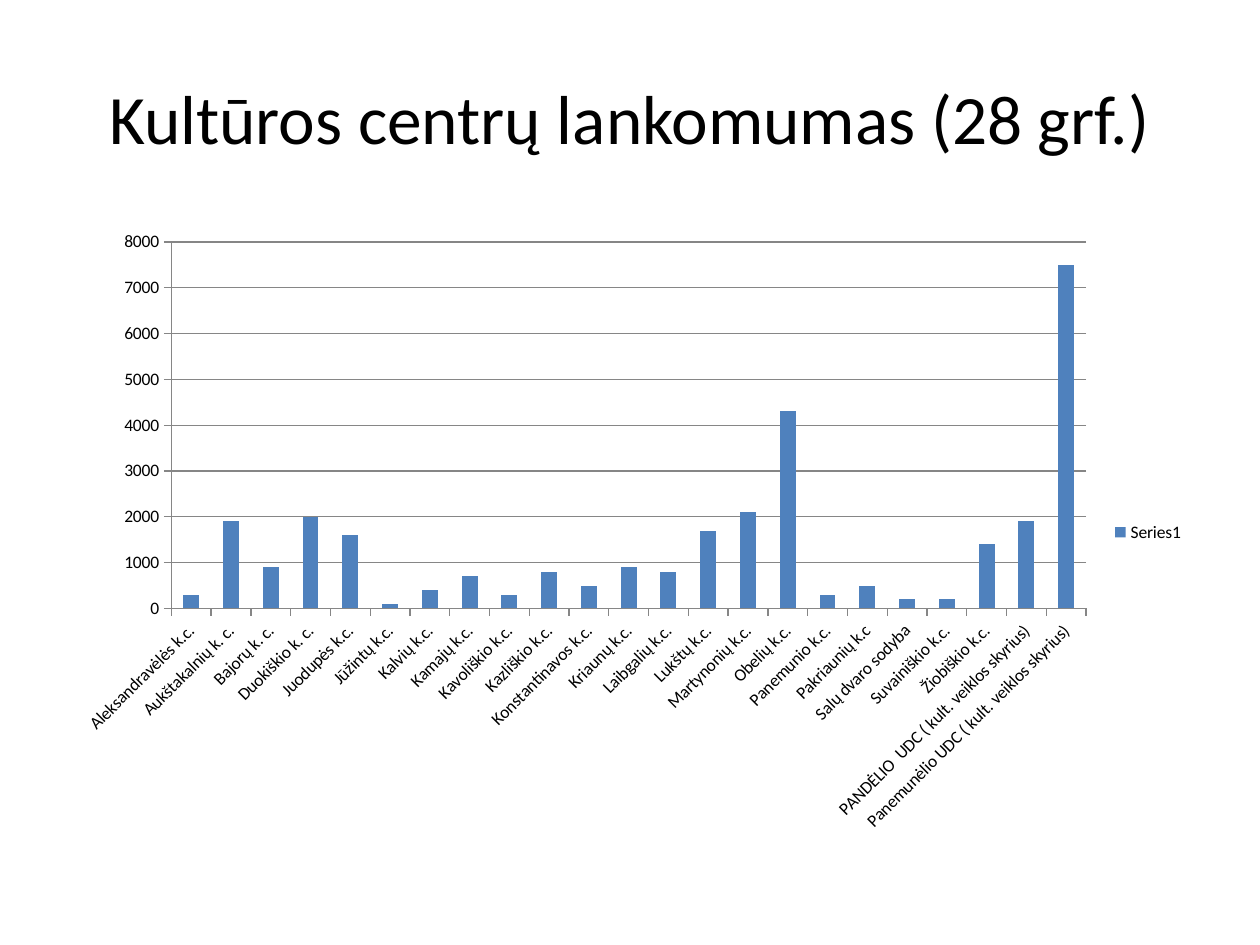
from lxml import etree
from pptx import Presentation
from pptx import util as u
from pptx.chart.data import CategoryChartData
from pptx.dml.color import RGBColor
from pptx.enum import chart as ch, text
from pptx.oxml.ns import qn

TITLE = "Kultūros centrų lankomumas (28 grf.)"
VISITS = [
    ("Aleksandravėlės k.c.", 300),
    ("Aukštakalnių k. c.", 1900),
    ("Bajorų k. c.", 900),
    ("Duokiškio k. c.", 2000),
    ("Juodupės k.c.", 1600),
    ("Jūžintų k.c.", 100),
    ("Kalvių k.c.", 400),
    ("Kamajų k.c.", 700),
    ("Kavoliškio k.c.", 300),
    ("Kazliškio k.c.", 800),
    ("Konstantinavos k.c.", 500),
    ("Kriaunų k.c.", 900),
    ("Laibgalių k.c.", 800),
    ("Lukštų k.c.", 1700),
    ("Martynonių k.c.", 2100),
    ("Obelių k.c.", 4300),
    ("Panemunio k.c.", 300),
    ("Pakriaunių k.c", 500),
    ("Salų dvaro sodyba", 200),
    ("Suvainiškio k.c.", 200),
    ("Žiobiškio k.c.", 1400),
    ("PANDĖLIO  UDC ( kult. veiklos skyrius)", 1900),
    ("Panemunėlio UDC ( kult. veiklos skyrius)", 7500),
]
# Chart size and the plot area inside it, in inches
WIDE, HIGH = 9, 4.95
PLOT = {"x": 0.86 / WIDE, "y": 0.17 / HIGH,
        "w": 7.26 / WIDE, "h": 2.91 / HIGH}

FONT = "Calibri"
BLACK = RGBColor(0, 0, 0)
BLUE = RGBColor(0x4F, 0x81, 0xBD)
GRAY = RGBColor(0x86, 0x86, 0x86)

prs = Presentation()
prs.slide_width, prs.slide_height = u.Inches(10), u.Inches(7.5)
slide = prs.slides.add_slide(prs.slide_layouts[5])
left, wide = (prs.slide_width - u.Inches(WIDE)) // 2, u.Inches(WIDE)


def style(font, size):
    font.name, font.size = FONT, u.Pt(size)
    font.color.rgb = BLACK


# Title
title = slide.shapes.title
title.left, title.top = left, u.Inches(0.3)
title.width, title.height = wide, u.Inches(1.25)
title.text_frame.text = TITLE
title.text_frame.vertical_anchor = text.MSO_ANCHOR.MIDDLE
para = title.text_frame.paragraphs[0]
para.alignment = text.PP_ALIGN.CENTER
style(para.font, 39.6)

# Column chart
data = CategoryChartData()
data.categories = [name for name, _ in VISITS]
data.add_series("Series1", [count for _, count in VISITS])
chart = slide.shapes.add_chart(
    ch.XL_CHART_TYPE.COLUMN_CLUSTERED,
    left, u.Inches(1.75), wide, u.Inches(HIGH), data).chart
style(chart.font, 10)
chart.has_title = False
chart.has_legend = True
chart.legend.position = ch.XL_LEGEND_POSITION.RIGHT
chart.legend.include_in_layout = False

plot = chart.plots[0]
plot.gap_width = 150
plot.vary_by_categories = False
fill = plot.series[0].format.fill
fill.solid()
fill.fore_color.rgb = BLUE

# Axes and gridlines
cat, val = chart.category_axis, chart.value_axis
val.minimum_scale, val.maximum_scale, val.major_unit = 0, 8000, 1000
val.has_major_gridlines = True
for axis in (cat, val):
    axis.major_tick_mark = ch.XL_TICK_MARK.OUTSIDE
    style(axis.tick_labels.font, 10)
for part in (cat, val, val.major_gridlines):
    part.format.line.color.rgb = GRAY
    part.format.line.width = u.Pt(0.75)

# Slanted category names
body = cat._element.find(qn("c:txPr")).find(qn("a:bodyPr"))
body.set("rot", "-2700000")
body.set("vert", "horz")

# Fixed plot area
area = chart._chartSpace.chart.plotArea
old = area.find(qn("c:layout"))
if old is not None:
    area.remove(old)
layout = etree.Element(qn("c:layout"))
area.insert(0, layout)
manual = etree.SubElement(layout, qn("c:manualLayout"))
rules = [("layoutTarget", "inner"), ("xMode", "edge"), ("yMode", "edge")]
for tag, value in rules + list(PLOT.items()):
    etree.SubElement(manual, qn("c:" + tag)).set("val", str(value))

prs.save("out.pptx")
